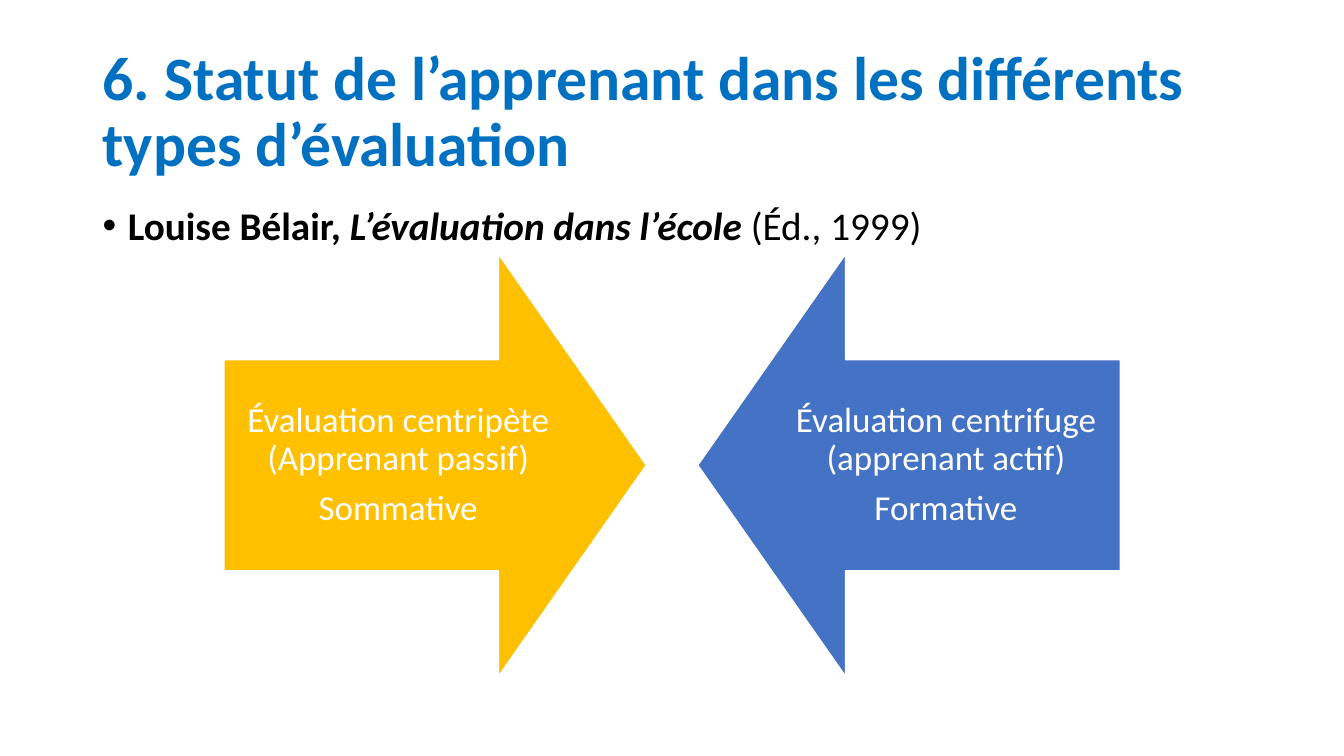
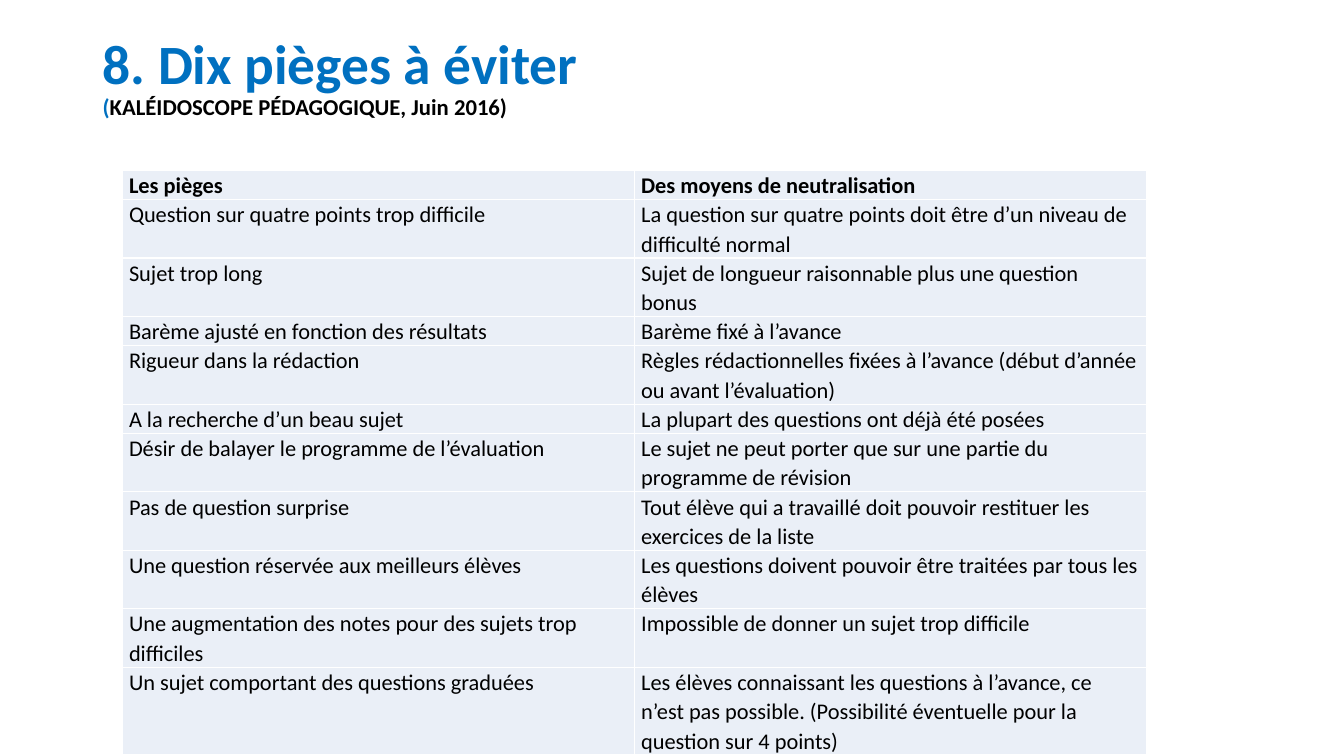
"""Build two slides on learner status and pitfalls in assessment."""
from lxml import etree
from pptx import Presentation
from pptx.dml.color import RGBColor
from pptx.enum import shapes, text
from pptx.oxml import ns
from pptx.util import Inches, Pt

FONT = "Calibri"
BLUE = RGBColor(0x00, 0x70, 0xC0)
BLACK = RGBColor(0x00, 0x00, 0x00)
WHITE = RGBColor(0xFF, 0xFF, 0xFF)
AMBER = RGBColor(0xFF, 0xC0, 0x00)
INDIGO = RGBColor(0x44, 0x72, 0xC4)
PALE_BLUE = RGBColor(0xEA, 0xEF, 0xF7)

MARGIN_LEFT, CONTENT_WIDTH = 0.92, 11.5
ARROW_TOP, ARROW_SIZE = 2.52, 4.19
COLUMN_WIDTH, LINE_HEIGHT = 5.08, 0.29

PITFALLS = [
    (1, "Les pièges", "Des moyens de neutralisation"),
    (2, "Question sur quatre points trop difficile",
     "La question sur quatre points doit être d’un niveau de difficulté normal"),
    (2, "Sujet trop long", "Sujet de longueur raisonnable plus une question bonus"),
    (1, "Barème ajusté en fonction des résultats", "Barème fixé à l’avance"),
    (2, "Rigueur dans la rédaction",
     "Règles rédactionnelles fixées à l’avance (début d’année ou avant l’évaluation)"),
    (1, "A la recherche d’un beau sujet", "La plupart des questions ont déjà été posées"),
    (2, "Désir de balayer le programme de l’évaluation",
     "Le sujet ne peut porter que sur une partie du programme de révision"),
    (2, "Pas de question surprise",
     "Tout élève qui a travaillé doit pouvoir restituer les exercices de la liste"),
    (2, "Une question réservée aux meilleurs élèves",
     "Les questions doivent pouvoir être traitées par tous les élèves"),
    (2, "Une augmentation des notes pour des sujets trop difficiles",
     "Impossible de donner un sujet trop difficile"),
    (3, "Un sujet comportant des questions graduées",
     "Les élèves connaissant les questions à l’avance, ce n’est pas possible. "
     "(Possibilité éventuelle pour la question sur 4 points)"),
]


def style_paragraph(paragraph, size, color, bold=False, spacing=0.9):
    """Set the font and line spacing of a paragraph."""
    font = paragraph.font
    font.name, font.size, font.bold = FONT, Pt(size), bold
    font.color.rgb = color
    paragraph.line_spacing = spacing


def add_run(paragraph, wording):
    """Append a run and return its font."""
    run = paragraph.add_run()
    run.text = wording
    return run.font


def add_text_line(slide, top, height, anchor):
    """Add a content-wide text box and return its first paragraph."""
    frame = slide.shapes.add_textbox(
        Inches(MARGIN_LEFT), Inches(top), Inches(CONTENT_WIDTH), Inches(height)).text_frame
    frame.word_wrap = True
    frame.vertical_anchor = anchor
    return frame.paragraphs[0]


def add_title(slide, wording, size, height):
    """Add the blue slide title and return its paragraph."""
    title = add_text_line(slide, 0.4, height, text.MSO_ANCHOR.MIDDLE)
    style_paragraph(title, size, BLUE, bold=True)
    add_run(title, wording)
    return title


def add_citation(slide, author, work, edition):
    """Add a bulleted reference."""
    citation = add_text_line(slide, 2, 0.55, text.MSO_ANCHOR.TOP)
    style_paragraph(citation, 28, BLACK)
    add_run(citation, author).bold = True
    work_font = add_run(citation, work)
    work_font.bold = work_font.italic = True
    add_run(citation, edition)
    properties = citation._p.get_or_add_pPr()
    properties.set("marL", str(Inches(0.25)))
    properties.set("indent", str(Inches(-0.25)))
    bullet_font = etree.SubElement(properties, ns.qn("a:buFont"))
    bullet_font.set("typeface", "Arial")
    etree.SubElement(properties, ns.qn("a:buChar")).set("char", "•")
    defaults = properties.find(ns.qn("a:defRPr"))
    if defaults is not None:
        properties.append(defaults)


def add_arrow(slide, direction, left, color, lines):
    """Add a block arrow holding centred text."""
    arrow = slide.shapes.add_shape(
        direction, Inches(left), Inches(ARROW_TOP), Inches(ARROW_SIZE), Inches(ARROW_SIZE))
    arrow.adjustments[0], arrow.adjustments[1] = 0.5, 0.35
    arrow.shadow.inherit = False
    arrow.fill.solid()
    arrow.fill.fore_color.rgb = color
    arrow.line.color.rgb = WHITE
    arrow.line.width = Pt(1)
    frame = arrow.text_frame
    frame.word_wrap = True
    frame.vertical_anchor = text.MSO_ANCHOR.MIDDLE
    frame.margin_left = frame.margin_right = Inches(0.19)
    frame.margin_top = frame.margin_bottom = Inches(0.19)
    frame.text = "\n".join(lines)
    for paragraph in frame.paragraphs:
        style_paragraph(paragraph, 25, WHITE)
        paragraph.alignment = text.PP_ALIGN.CENTER
        paragraph.space_after = Pt(8.75)


def add_cell_borders(cell):
    """Draw thin white borders around a cell."""
    properties = cell._tc.get_or_add_tcPr()
    for position, side in enumerate(("lnL", "lnR", "lnT", "lnB")):
        border = etree.Element(ns.qn(f"a:{side}"), w=str(Pt(1)))
        fill = etree.SubElement(border, ns.qn("a:solidFill"))
        etree.SubElement(fill, ns.qn("a:srgbClr")).set("val", str(WHITE))
        properties.insert(position, border)


def fill_cell(cell, wording, bold):
    """Write and style one table cell."""
    cell.text = wording
    cell.margin_left = cell.margin_right = Inches(0.07)
    cell.margin_top = cell.margin_bottom = 0
    cell.fill.solid()
    cell.fill.fore_color.rgb = PALE_BLUE
    style_paragraph(cell.text_frame.paragraphs[0], 16, BLACK, bold, 1.07)
    add_cell_borders(cell)


def add_pitfall_table(slide):
    """Add the table of pitfalls and remedies."""
    line_total = sum(line_count for line_count, *_ in PITFALLS)
    table = slide.shapes.add_table(
        len(PITFALLS), 2, Inches(1.21), Inches(1.69),
        Inches(2 * COLUMN_WIDTH), Inches(line_total * LINE_HEIGHT)).table
    table.first_row = table.horz_banding = False
    for index, (line_count, *wordings) in enumerate(PITFALLS):
        table.rows[index].height = Inches(line_count * LINE_HEIGHT)
        for column, wording in enumerate(wordings):
            fill_cell(table.cell(index, column), wording, bold=index == 0)


def build_learner_status(slide):
    """Build the slide on learner status."""
    add_title(slide, "6. Statut de l’apprenant dans les différents types d’évaluation", 44, 1.45)
    add_citation(slide, "Louise Bélair, ", "L’évaluation dans l’école ", "(Éd., 1999)")
    add_arrow(slide, shapes.MSO_SHAPE.RIGHT_ARROW, 2.22, AMBER,
              ["Évaluation centripète (Apprenant passif)", "Sommative"])
    add_arrow(slide, shapes.MSO_SHAPE.LEFT_ARROW, 6.92, INDIGO,
              ["Évaluation centrifuge (apprenant actif)", "Formative"])


def build_pitfalls(slide):
    """Build the slide on the ten pitfalls."""
    title = add_title(slide, "8. Dix pièges à éviter", 39.6, 0.76)
    title.add_line_break()
    add_run(title, "(").size = Pt(16.2)
    source_font = add_run(title, "KALÉIDOSCOPE PÉDAGOGIQUE, Juin 2016)")
    source_font.size = Pt(16.2)
    source_font.color.rgb = BLACK
    add_pitfall_table(slide)


def main():
    """Build and save the presentation."""
    presentation = Presentation()
    presentation.slide_width, presentation.slide_height = Inches(13.33), Inches(7.5)
    blank = presentation.slide_layouts[6]
    for build in (build_learner_status, build_pitfalls):
        build(presentation.slides.add_slide(blank))
    presentation.save("out.pptx")


if __name__ == "__main__":
    main()
